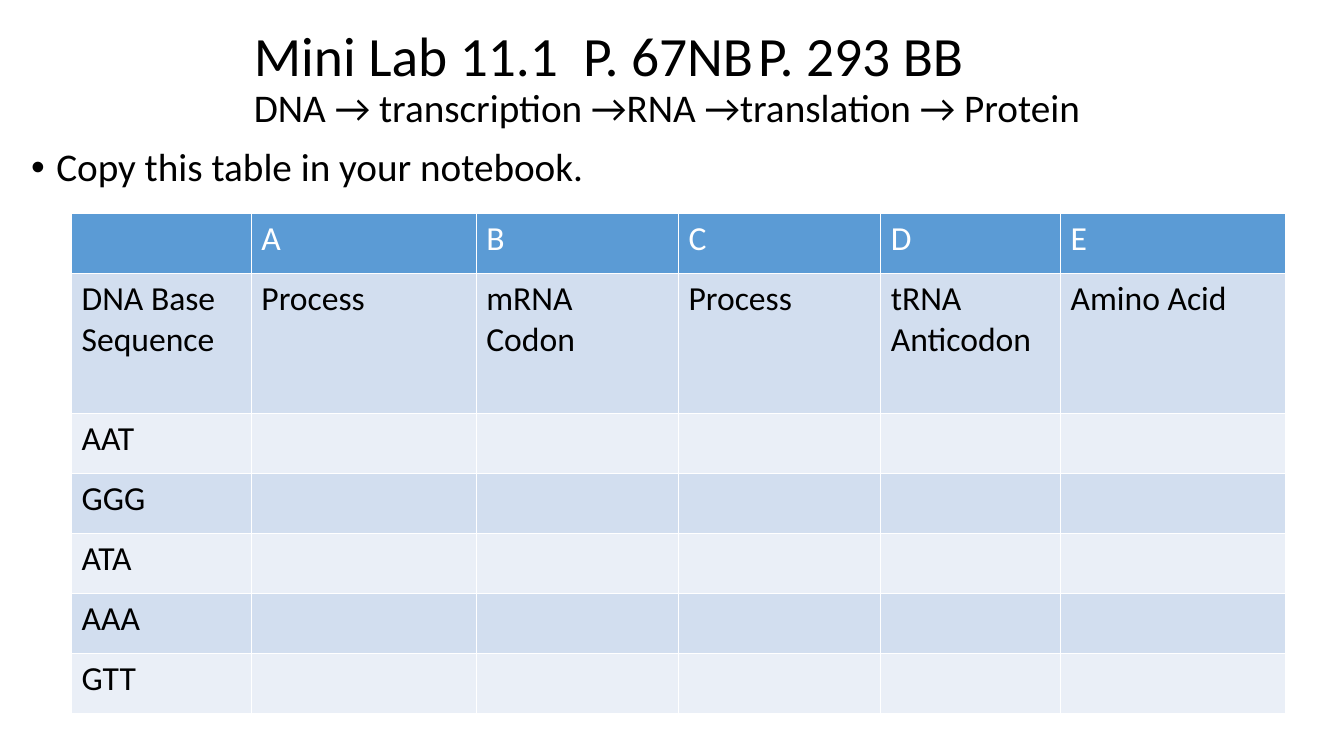
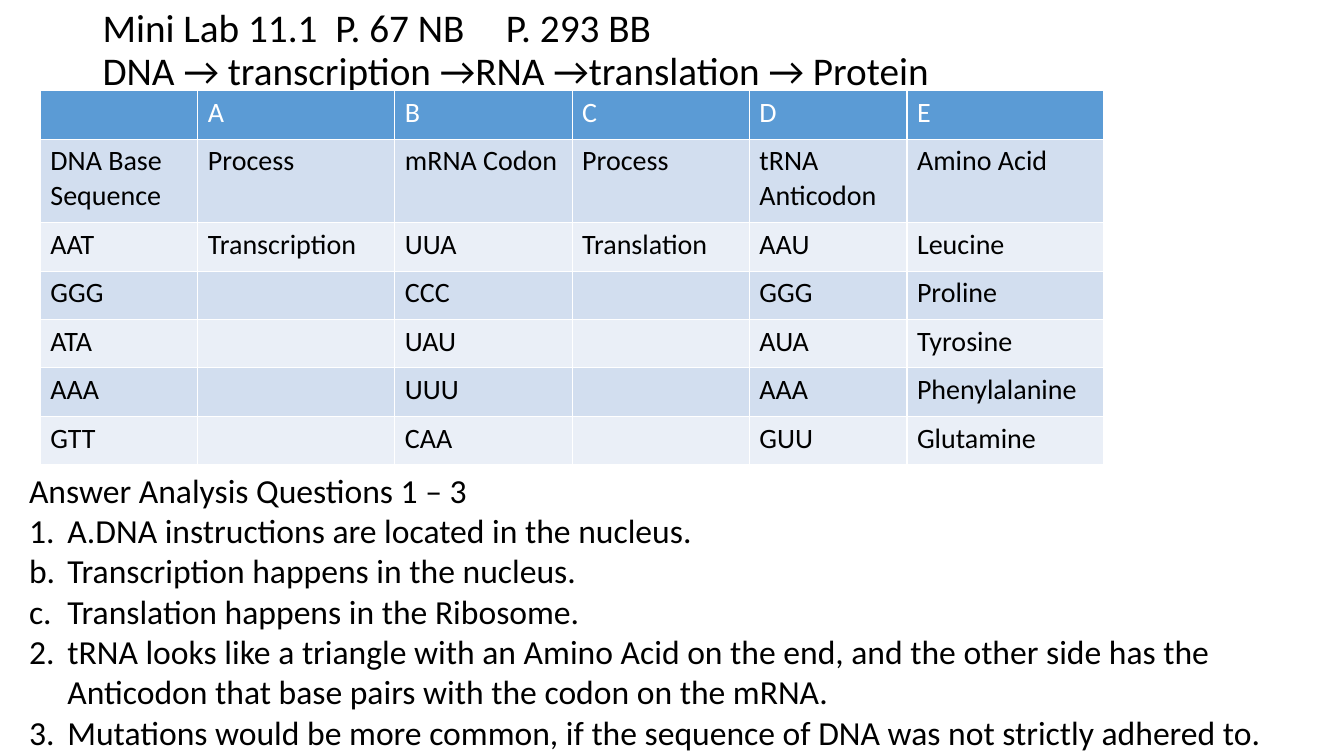
"""Builds two slides on a lab about DNA, RNA and protein."""
from lxml.etree import SubElement as Sub
from pptx import Presentation
from pptx.dml.color import RGBColor as RGB
from pptx.enum.text import MSO_ANCHOR as Anchor
from pptx.oxml.ns import qn
from pptx.util import Inches, Pt

BLACK = RGB(0x00, 0x00, 0x00)
WHITE = RGB(0xFF, 0xFF, 0xFF)
BLUE = RGB(0x5B, 0x9B, 0xD5)
BANDS = RGB(0xEA, 0xEF, 0xF7), RGB(0xD2, 0xDE, 0xEF)
FONT = "Calibri"
SHARES = 8, 10, 9, 9, 8, 10
FLOW = "DNA → transcription →RNA →translation → Protein"
TOP = ["", "A", "B", "C", "D", "E"]
LABELS = ["DNA Base Sequence", "Process", "mRNA Codon", "Process",
          "tRNA Anticodon", "Amino Acid"]
BASES = ["AAT", "GGG", "ATA", "AAA", "GTT"]
RESULTS = [
    ["Transcription", "UUA", "Translation", "AAU", "Leucine"],
    ["", "CCC", "", "GGG", "Proline"],
    ["", "UAU", "", "AUA", "Tyrosine"],
    ["", "UUU", "", "AAA", "Phenylalanine"],
    ["", "CAA", "", "GUU", "Glutamine"],
]
ANSWERS = [
    ("arabicPeriod", 1, "A.DNA instructions are located in the nucleus."),
    ("alphaLcPeriod", 2, "Transcription happens in the nucleus."),
    ("alphaLcPeriod", 2, "Translation happens in the Ribosome."),
    ("arabicPeriod", 2, "tRNA looks like a triangle with an Amino Acid on the "
     "end, and the other side has the Anticodon that base pairs with the "
     "codon on the mRNA."),
    ("arabicPeriod", 2, "Mutations would be more common, if the sequence of "
     "DNA was not strictly adhered to."),
]


class Deck:
    def __init__(self):
        self.show = Presentation()
        self.show.slide_width = Inches(13.33)
        self.show.slide_height = Inches(7.5)
        self.slide = None

    def page(self):
        self.slide = self.show.slides.add_slide(self.show.slide_layouts[6])

    def style(self, para, size, color=BLACK):
        font = para.font
        font.name, font.size, font.bold = FONT, Pt(size), False
        font.color.rgb = color

    def frame(self, box):
        frame = self.slide.shapes.add_textbox(*map(Inches, box)).text_frame
        frame.word_wrap = True
        return frame

    def mark(self, para, indent, tag, **values):
        props = para._p.get_or_add_pPr()
        props.set("marL", str(Inches(indent)))
        props.set("indent", str(-Inches(indent)))
        if tag == "a:buChar":
            Sub(props, qn("a:buFont"), typeface="Arial")
        Sub(props, qn(tag), **values)

    def title(self, box, text, big=None):
        frame = self.frame(box)
        frame.vertical_anchor = Anchor.MIDDLE
        para = frame.paragraphs[0]
        para.line_spacing = 0.9
        self.style(para, 28)
        lead = para.add_run()
        lead.text = text
        if big:
            lead.font.size = Pt(big)
        para.add_line_break()
        para.add_run().text = FLOW

    def bullet(self, box, text):
        para = self.frame(box).paragraphs[0]
        para.text = text
        self.mark(para, 0.25, "a:buChar", char="•")
        para.line_spacing = 0.9
        para.space_before = Pt(10)
        self.style(para, 28)

    def answers(self, box, head, items):
        frame = self.frame(box)
        para = frame.paragraphs[0]
        para.text = head
        self.style(para, 24)
        for kind, start, text in items:
            para = frame.add_paragraph()
            para.text = text
            self.mark(para, 0.38, "a:buAutoNum", type=kind, startAt=str(start))
            self.style(para, 24)

    def table(self, box, label, size, rows):
        left, top, width, height = box
        grid = self.slide.shapes.add_table(
            len(rows), len(SHARES), *map(Inches, box)).table
        for col, share in zip(grid.columns, SHARES):
            col.width = Inches(width * share / sum(SHARES))
        plain = (height - label) / (len(rows) - 1)
        for r, texts in enumerate(rows):
            grid.rows[r].height = Inches(label if r == 1 else plain)
            for c, text in enumerate(texts):
                cell = grid.cell(r, c)
                cell.fill.solid()
                cell.fill.fore_color.rgb = BANDS[r % 2] if r else BLUE
                cell.text = text
                self.style(cell.text_frame.paragraphs[0], size,
                           BLACK if r else WHITE)


def main():
    deck = Deck()

    deck.page()
    deck.title((2.42, 0.17, 9, 1.25), "Mini Lab 11.1  P. 67NB\tP. 293 BB", 39.6)
    deck.bullet((0.21, 1.42, 12.21, 5.34), "Copy this table in your notebook.")
    blank = [[base] + [""] * 5 for base in BASES]
    deck.table((0.71, 2.12, 12.04, 4.96), 1.39, 24, [TOP, LABELS] + blank)

    deck.page()
    deck.title((0.92, 0, 11.5, 1.02), "Mini Lab 11.1  P. 67 NB\tP. 293 BB")
    full = [[base] + rest for base, rest in zip(BASES, RESULTS)]
    deck.table((0.4, 0.9, 10.55, 3.71), 0.83, 20, [TOP, LABELS] + full)
    deck.answers((0.19, 4.61, 13.14, 2.93),
                 "Answer Analysis Questions 1 – 3", ANSWERS)

    deck.show.save("out.pptx")


if __name__ == "__main__":
    main()
